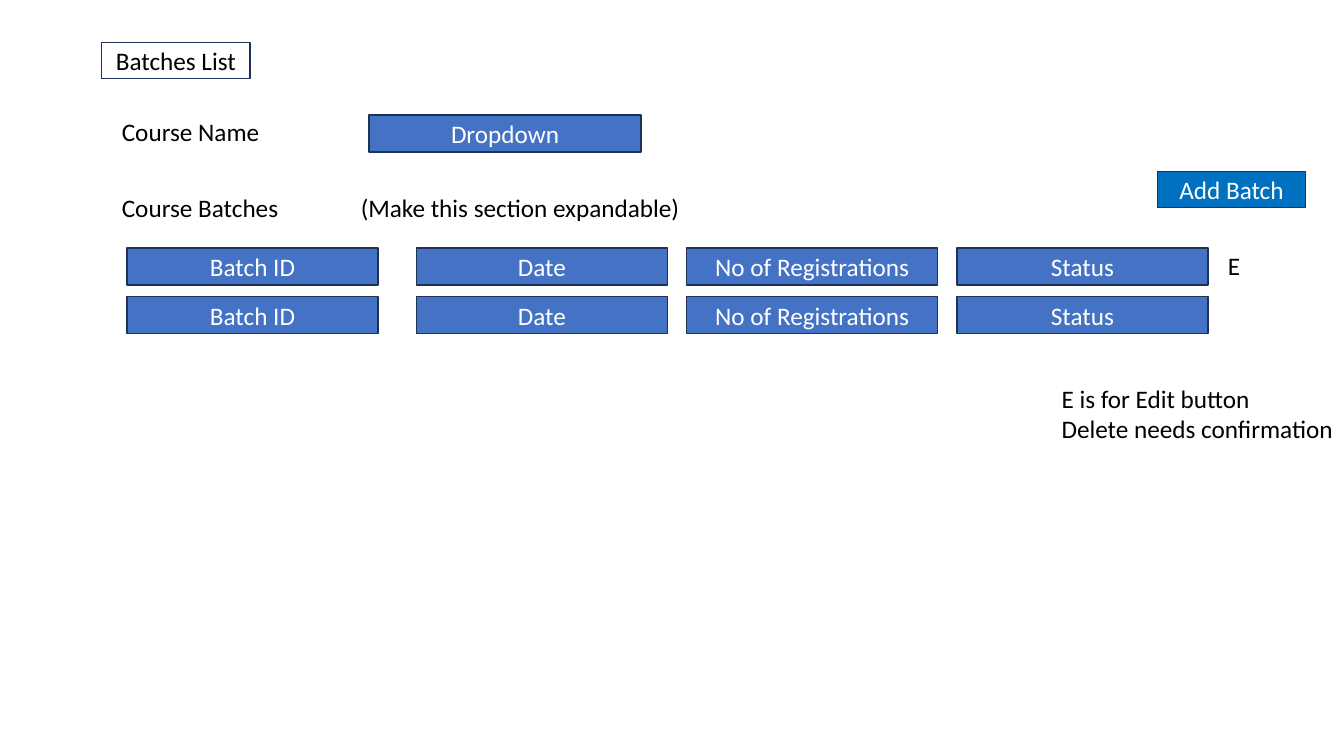
import pptx
import pptx.dml.color
import pptx.enum.shapes
import pptx.enum.text
import pptx.util

RGBColor = pptx.dml.color.RGBColor
BLACK = RGBColor(0x00, 0x00, 0x00)
WHITE = RGBColor(0xFF, 0xFF, 0xFF)
FIELD_BLUE = RGBColor(0x44, 0x72, 0xC4)
BUTTON_BLUE = RGBColor(0x00, 0x70, 0xC0)
OUTLINE = RGBColor(0x1E, 0x32, 0x56)

ALIGN = pptx.enum.text.PP_ALIGN
ANCHOR = pptx.enum.text.MSO_ANCHOR


def px(length):
    """Convert px to EMU, at 100 px to the inch."""
    return pptx.util.Emu(length * 9144)


def write_text(shape, text, color=BLACK, align=ALIGN.LEFT, anchor=ANCHOR.TOP):
    frame = shape.text_frame
    frame.word_wrap = True
    frame.vertical_anchor = anchor
    frame.text = text
    for paragraph in frame.paragraphs:
        paragraph.alignment = align
        font = paragraph.runs[0].font
        font.name = "Calibri"
        font.size = pptx.util.Pt(18)
        font.color.rgb = color


def add_label(slide, text, left, top, width, height=40):
    shape = slide.shapes.add_textbox(px(left), px(top), px(width), px(height))
    write_text(shape, text)
    shape.text_frame.auto_size = pptx.enum.text.MSO_AUTO_SIZE.SHAPE_TO_FIT_TEXT


def add_box(slide, text, left, top, width, height, fill=FIELD_BLUE, color=WHITE):
    shape = slide.shapes.add_shape(
        pptx.enum.shapes.MSO_SHAPE.RECTANGLE,
        px(left), px(top), px(width), px(height))
    shape.shadow.inherit = False
    if fill is None:
        shape.fill.background()
    else:
        shape.fill.solid()
        shape.fill.fore_color.rgb = fill
    shape.line.color.rgb = OUTLINE
    shape.line.width = pptx.util.Pt(1)
    write_text(shape, text, color=color, align=ALIGN.CENTER, anchor=ANCHOR.MIDDLE)


def add_course_form(slide, left, top):
    # Page title
    add_box(slide, "Batches List", left, top, 147, 36, fill=None, color=BLACK)
    # Course selector
    add_label(slide, "Course Name", left + 10, top + 69, 191)
    add_box(slide, "Dropdown", left + 265, top + 72, 270, 37)
    # Section heading and its button
    add_label(slide, "Course Batches", left + 10, top + 144, 191)
    add_label(slide, "(Make this section expandable)", left + 247, top + 144, 457)
    add_box(slide, "Add Batch", left + 1047, top + 128, 147, 36, fill=BUTTON_BLUE)


def add_batch_grid(slide, left, top):
    # The ID column stands apart; the others are evenly spaced
    headings = ["Batch ID", "Date", "No of Registrations", "Status"]
    columns = [left] + [left + 287 + 268 * index for index in range(3)]
    for row in range(2):
        for heading, column in zip(headings, columns):
            add_box(slide, heading, column, top + 48 * row, 249, 37)
    # Edit mark beside the first row
    add_label(slide, "E", left + 1082, top - 3, 24)


def add_notes_on_actions(slide, left, top):
    add_label(slide, "E is for Edit button\nDelete needs confirmation",
              left, top, 295, 71)


def main():
    presentation = pptx.Presentation()
    presentation.slide_width = px(1333)
    presentation.slide_height = px(750)
    slide = presentation.slides.add_slide(presentation.slide_layouts[6])
    add_course_form(slide, 101, 42)
    add_batch_grid(slide, 126, 246)
    add_notes_on_actions(slide, 1043, 375)
    presentation.save("out.pptx")


if __name__ == "__main__":
    main()
